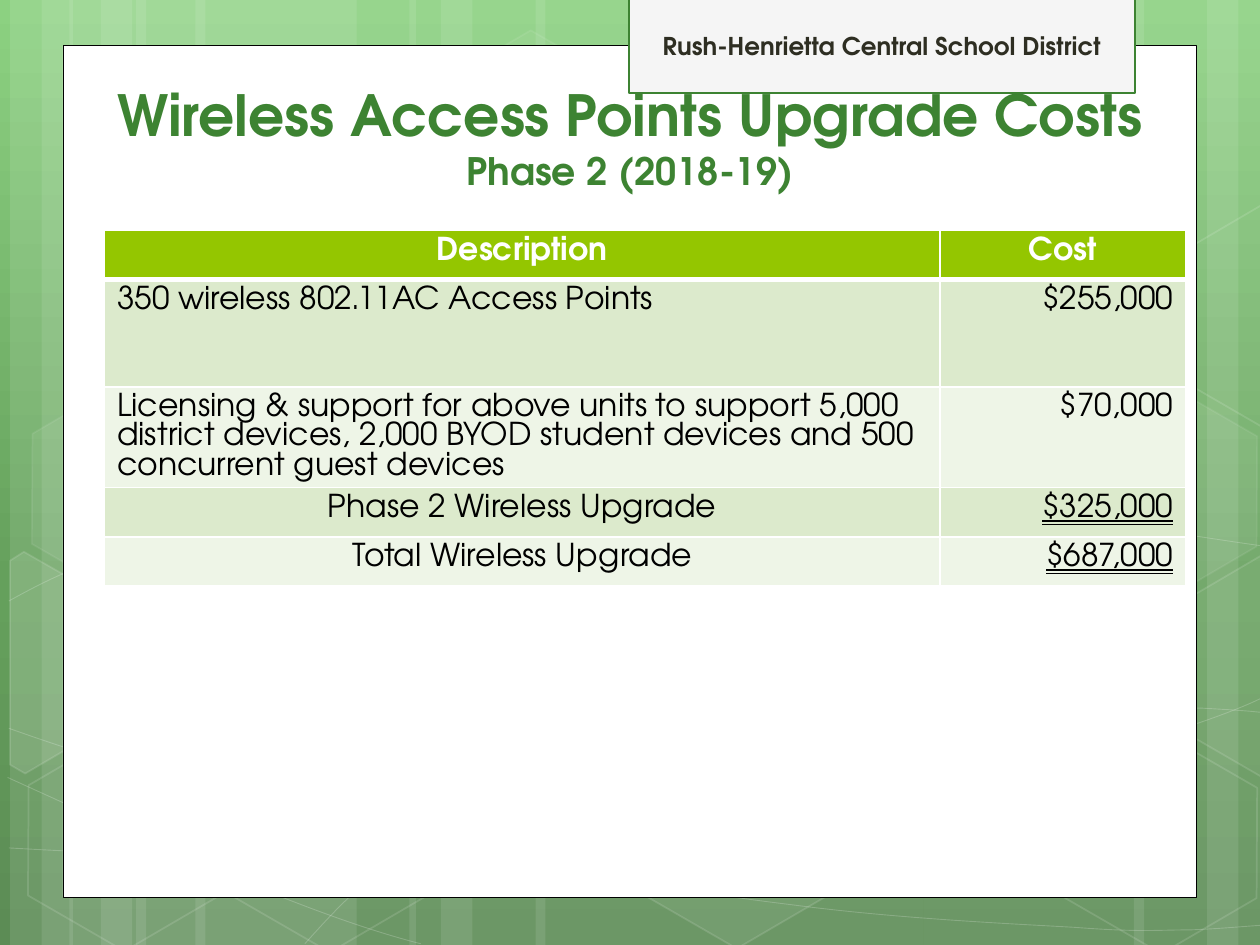
from copy import deepcopy
from typing import NamedTuple, Optional

from lxml.etree import SubElement
from pptx import Presentation
from pptx.dml.color import RGBColor
from pptx.enum.shapes import MSO_SHAPE
from pptx.enum.text import MSO_ANCHOR, MSO_AUTO_SIZE, MSO_UNDERLINE, PP_ALIGN
from pptx.oxml.ns import qn
from pptx.util import Inches, Pt

FONT = "TeX Gyre Adventor"
WHITE = RGBColor(0xFF, 0xFF, 0xFF)
BLACK = RGBColor(0x00, 0x00, 0x00)
GREEN = RGBColor(0x3D, 0x83, 0x32)
LIME = RGBColor(0x94, 0xC6, 0x00)
MINT = RGBColor(0xDC, 0xEA, 0xCC)
PALE = RGBColor(0xEE, 0xF5, 0xE7)
GREY = RGBColor(0xF5, 0xF5, 0xF5)
DARK = RGBColor(0x2E, 0x2E, 0x22)
STOPS = ((0, "8CD181"), (62, "65A05C"), (100, "5C8C55"))

Point = tuple[float, float]


class Look(NamedTuple):
    fill: Optional[RGBColor] = None
    shade: int = 100  # fill opacity in percent
    line: Optional[RGBColor] = None
    width: float = 1
    tint: int = 100  # line opacity in percent


class Hex(NamedTuple):
    left: float
    top: float
    shade: int
    tint: int


class Shard(NamedTuple):
    points: list[Point]
    shade: int


class Item(NamedTuple):
    text: str
    cost: str
    height: float
    align: PP_ALIGN = PP_ALIGN.LEFT
    total: bool = False


# Backdrop: left and width of each stripe
STRIPES = [(1.08, 1.75), (0.08, 0.5), (0.33, 0.83), (1.55, 1.75), (0.55, 0.5),
           (0.8, 0.83), (7.33, 1.75), (9.58, 0.5), (9, 0.83), (4.25, 3.08),
           (3.25, 0.5), (3.5, 0.83)]

# Backdrop: each curve is a start, then three Bezier points per segment
CURVES = [
    [(0.07, 6.73), (0.61, 6.76), (1.15, 6.79), (1.9, 6.78),
     (2.65, 6.77), (3.58, 6.75), (4.58, 6.65), (5.58, 6.55), (7, 6.36),
     (7.92, 6.17), (8.83, 5.98), (9.77, 5.68), (10.07, 5.51)],
    [(0.07, 4.77), (0.36, 4.61), (0.65, 4.46), (1.21, 4.31),
     (1.78, 4.16), (2.59, 3.94), (3.47, 3.87), (4.36, 3.8), (5.44, 3.79),
     (6.54, 3.87), (7.64, 3.95), (9.47, 4.26), (10.07, 4.34)],
    [(0.06, 6.17), (1.27, 6.72), (2.47, 7.27), (3.34, 7.49)],
    [(0.07, 5.78), (0.38, 5.89), (0.7, 6), (1.28, 6.16),
     (1.86, 6.31), (2.73, 6.56), (3.57, 6.73), (4.4, 6.9), (5.45, 7.08),
     (6.28, 7.18), (7.11, 7.29), (8, 7.33), (8.53, 7.36), (9.05, 7.4),
     (9.19, 7.38), (9.45, 7.38), (9.71, 7.37), (9.89, 7.35), (10.07, 7.34)],
    [(2.42, 7.49), (2.6, 7.29), (2.78, 7.09), (3.02, 6.91),
     (3.26, 6.73), (3.6, 6.53), (3.88, 6.39), (4.16, 6.25), (4.33, 6.19),
     (4.7, 6.09), (5.06, 5.99), (5.73, 5.85), (6.08, 5.78), (6.44, 5.71),
     (6.49, 5.71), (6.8, 5.69), (7.11, 5.66), (7.6, 5.63), (7.94, 5.62),
     (8.29, 5.61), (8.86, 5.62), (8.86, 5.62), (9.08, 5.62), (9.3, 5.62),
     (9.53, 5.62), (9.71, 5.63), (9.88, 5.64), (9.97, 5.65), (10.06, 5.66),
     (10.03, 5.65), (10.06, 5.66)],
]

HEXES = [Hex(3.34, 0.36, 4, 8), Hex(4.97, 5.89, 6, 12), Hex(0.11, 5.91, 0, 12),
         Hex(0.14, 3.12, 7, 8), Hex(1.74, 5.92, 0, 12), Hex(7.53, 4.53, 10, 12),
         Hex(8.34, 5.93, 0, 12), Hex(8.34, 3.14, 7, 8)]

SHARDS = [
    Shard([(0.08, 4.45), (0.19, 4.38), (0.96, 4.82), (0.95, 5.7),
           (0.2, 6.14), (0.08, 6.07)], 10),
    Shard([(9.26, 4.85), (10.01, 4.41), (10.09, 4.46), (10.09, 6.13),
           (10.02, 6.17), (9.26, 5.73)], 4),
    Shard([(9.26, 2.07), (10.01, 1.63), (10.1, 1.68), (10.09, 3.35),
           (10.02, 3.39), (9.26, 2.95)], 0),
]

ITEMS = [
    Item("350 wireless 802.11AC Access Points", "$255,000", 0.85),
    Item("Licensing & support for above units to support 5,000 district devices, "
         "2,000 BYOD student devices and 500 concurrent guest devices",
         "$70,000", 0.67),
    Item("Phase 2 Wireless Upgrade", "$325,000", 0.39, PP_ALIGN.CENTER, True),
    Item("Total Wireless Upgrade", "$687,000", 0.39, PP_ALIGN.CENTER, True),
]


def paint(fill, color: Optional[RGBColor], alpha: int) -> None:
    if color is None or alpha == 0:
        fill.background()
        return
    fill.solid()
    fill.fore_color.rgb = color
    if alpha < 100:
        node = fill._xPr.find(".//" + qn("a:srgbClr"))
        SubElement(node, qn("a:alpha")).set("val", str(alpha * 1000))


def style(shape, look: Look) -> None:
    shape.shadow.inherit = False
    paint(shape.fill, look.fill, look.shade)
    paint(shape.line.fill, look.line, look.tint)
    if look.line is not None:
        shape.line.width = Pt(look.width)


def add_box(slide, kind: MSO_SHAPE, left: float, top: float, width: float,
            height: float, look: Look):
    shape = slide.shapes.add_shape(kind, Inches(left), Inches(top),
                                   Inches(width), Inches(height))
    style(shape, look)
    return shape


def add_path(slide, points: list[Point], close: bool, look: Look):
    spots = [(Inches(x), Inches(y)) for x, y in points]
    pen = slide.shapes.build_freeform(*spots[0])
    pen.add_line_segments(spots[1:], close=close)
    shape = pen.convert_to_shape()
    style(shape, look)
    return shape


def bend(shape) -> None:
    """Turn every three straight segments into one Bezier segment."""
    route = shape._element.spPr.find(".//" + qn("a:path"))
    lines = route.findall(qn("a:lnTo"))
    for i in range(0, len(lines), 3):
        curve = SubElement(route, qn("a:cubicBezTo"))
        for line in lines[i:i + 3]:
            curve.append(line[0])
            route.remove(line)


def set_back(slide) -> None:
    fill = slide.background.fill
    fill.gradient()
    fill.gradient_angle = 270
    stops = fill._fill._gradFill.find(qn("a:gsLst"))
    model = deepcopy(stops[0])
    for node in list(stops):
        stops.remove(node)
    for spot, color in STOPS:
        stop = deepcopy(model)
        stop.set("pos", str(spot * 1000))
        for node in list(stop):
            stop.remove(node)
        SubElement(stop, qn("a:srgbClr")).set("val", color)
        stops.append(stop)


def set_font(font, size: float, color: RGBColor, bold: bool) -> None:
    font.name, font.size, font.bold = FONT, Pt(size), bold
    font.color.rgb = color


def rule_cell(cell, base: float) -> None:
    props = cell._tc.get_or_add_tcPr()
    for side, width in (("L", 1), ("R", 1), ("T", 1), ("B", base)):
        line = SubElement(props, qn("a:ln" + side))
        line.set("w", str(Pt(width)))
        solid = SubElement(line, qn("a:solidFill"))
        SubElement(solid, qn("a:srgbClr")).set("val", str(WHITE))


def fill_cell(cell, text: str, align: PP_ALIGN, back: RGBColor,
              color: RGBColor = BLACK, bold: bool = False, base: float = 1):
    rule_cell(cell, base)
    paint(cell.fill, back, 100)
    cell.text = text
    para = cell.text_frame.paragraphs[0]
    para.alignment = align
    set_font(para.font, 18, color, bold)
    return para


def add_costs(slide) -> None:
    table = slide.shapes.add_table(len(ITEMS) + 1, 2, Inches(0.83), Inches(1.83),
                                   Inches(8.58), Inches(2.69)).table
    for column, width in zip(table.columns, (6.63, 1.95)):
        column.width = Inches(width)
    table.rows[0].height = Inches(0.39)
    for col, head in enumerate(("Description", "Cost")):
        fill_cell(table.cell(0, col), head, PP_ALIGN.CENTER, LIME, WHITE, True, 3)
    for row, item in enumerate(ITEMS, 1):
        table.rows[row].height = Inches(item.height)
        back = MINT if row % 2 else PALE
        fill_cell(table.cell(row, 0), item.text, item.align, back)
        cost = fill_cell(table.cell(row, 1), item.cost, PP_ALIGN.RIGHT, back)
        if item.total:
            cost.font.underline = MSO_UNDERLINE.DOUBLE_LINE


def add_title(slide) -> None:
    title = slide.shapes.title
    title.left, title.top = Inches(0.75), Inches(0.75)
    title.width, title.height = Inches(8.5), Inches(0.83)
    frame = title.text_frame
    frame.auto_size, frame.word_wrap = MSO_AUTO_SIZE.NONE, True
    frame.vertical_anchor = MSO_ANCHOR.BOTTOM
    para = frame.paragraphs[0]
    para.alignment = PP_ALIGN.CENTER
    set_font(para.font, 32.4, GREEN, True)
    para.add_run().text = "Wireless Access Points Upgrade Costs"
    para.add_line_break()
    phase = para.add_run()
    phase.text, phase.font.size = "Phase 2 (2018-19)", Pt(21.6)
    slide.shapes._spTree.append(title._element)  # in front of the backdrop


def main() -> None:
    deck = Presentation()
    deck.slide_width, deck.slide_height = Inches(10), Inches(7.5)
    slide = deck.slides.add_slide(deck.slide_layouts[5])

    # Backdrop
    set_back(slide)
    for left, width in STRIPES:
        add_box(slide, MSO_SHAPE.RECTANGLE, left, 0, width, 7.5, Look(WHITE, 10))
    for knots in CURVES:
        bend(add_path(slide, knots, False, Look(line=WHITE, width=0.5, tint=20)))
    for tile in HEXES:
        shape = add_box(slide, MSO_SHAPE.HEXAGON, tile.left, tile.top, 1.75, 1.52,
                        Look(WHITE, tile.shade, WHITE, 1, tile.tint))
        shape.adjustments[0] = 0.285
        shape.rotation = 30
    for shard in SHARDS:
        add_path(slide, shard.points, True, Look(WHITE, shard.shade, WHITE, 1, 12))

    # Panel and district tab
    add_box(slide, MSO_SHAPE.RECTANGLE, 0.5, 0.36, 9, 6.76,
            Look(WHITE, line=BLACK, width=0.5))
    tab = add_box(slide, MSO_SHAPE.RECTANGLE, 4.99, -0.02, 4.02, 0.76,
                  Look(GREY, line=GREEN, width=1.25))
    tab.text_frame.text = "Rush-Henrietta Central School District"
    tab.text_frame.vertical_anchor = MSO_ANCHOR.MIDDLE
    label = tab.text_frame.paragraphs[0]
    label.alignment = PP_ALIGN.CENTER
    set_font(label.font, 14, DARK, True)

    # Title and costs
    add_title(slide)
    add_costs(slide)
    deck.save("out.pptx")


if __name__ == "__main__":
    main()
